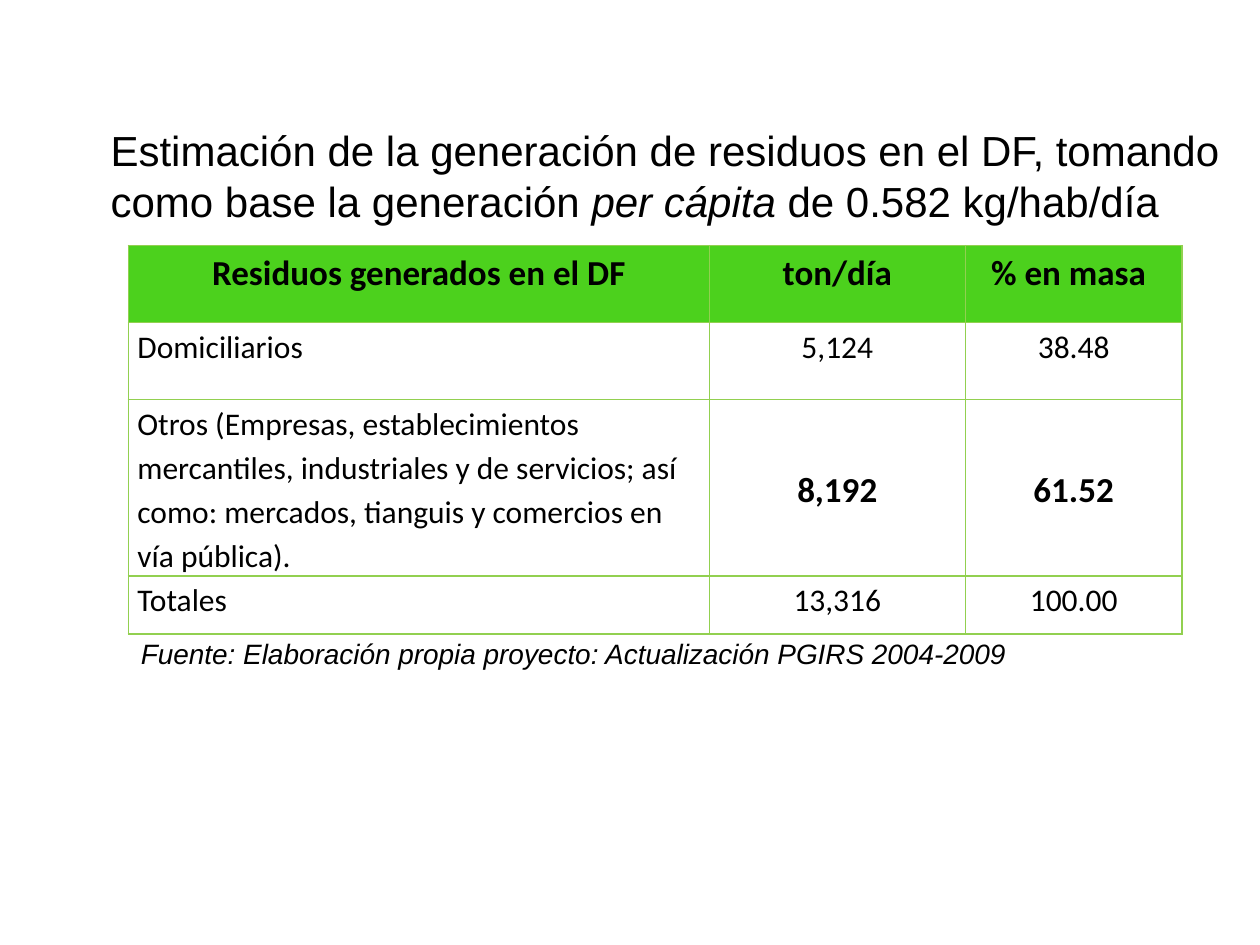
from dataclasses import dataclass

from lxml.etree import SubElement
from pptx import Presentation
from pptx.dml.color import RGBColor as Rgb
from pptx.enum.text import MSO_ANCHOR as Anchor, PP_ALIGN as Align
from pptx.oxml.ns import qn
from pptx.util import Cm, Pt


@dataclass(frozen=True)
class Theme:
    ink: str = "000000"
    header: str = "4CD11D"
    border: str = "92D050"
    prose: str = "Arial"
    grid: str = "Calibri"
    title: int = 24
    strong: int = 20
    body: int = 18
    source: int = 16


THEME = Theme()
COLUMNS = (11.71, 5.16, 4.37)
HEIGHTS = (1.55, 1.55, 3.5, 1.17)
OTHERS = (
    "Otros (Empresas, establecimientos mercantiles, industriales y de servicios; "
    "así como: mercados, tianguis y comercios en vía pública)."
)
WASTE = (
    ("Residuos generados en el DF", "ton/día", "% en masa"),
    ("Domiciliarios", "5,124", "38.48"),
    (OTHERS, "8,192", "61.52"),
    ("Totales", "13,316", "100.00"),
)


def style(font, face, size, bold=False, italic=False):
    font.name, font.size = face, Pt(size)
    font.bold, font.italic = bold, italic
    font.color.rgb = Rgb.from_string(THEME.ink)


def add_prose(slide, box, pieces, size):
    frame = slide.shapes.add_textbox(*map(Cm, box)).text_frame
    frame.word_wrap = True
    paragraph = frame.paragraphs[0]
    for words, italic in pieces:
        run = paragraph.add_run()
        run.text = words
        style(run.font, THEME.prose, size, italic=italic)


def outline(cell):
    properties = cell._tc.get_or_add_tcPr()
    for side in ("lnL", "lnR", "lnT", "lnB"):
        line = SubElement(properties, qn(f"a:{side}"), w=str(Pt(1)))
        fill = SubElement(line, qn("a:solidFill"))
        SubElement(fill, qn("a:srgbClr"), val=THEME.border)


def fill_cell(cell, words, row, column):
    is_header = row == 0
    is_strong = is_header or (row == 2 and column > 0)
    is_last_heading = is_header and column == 2
    cell.margin_left = Cm(0.52 if is_last_heading else 0.18)
    cell.margin_right = Cm(0.18)
    cell.margin_top = cell.margin_bottom = 0
    cell.vertical_anchor = Anchor.MIDDLE if is_strong and not is_header else Anchor.TOP
    outline(cell)
    if is_header:
        cell.fill.solid()
        cell.fill.fore_color.rgb = Rgb.from_string(THEME.header)
    else:
        cell.fill.background()
    cell.text_frame.text = words
    paragraph = cell.text_frame.paragraphs[0]
    centred = (is_header or column > 0) and not is_last_heading
    paragraph.alignment = Align.CENTER if centred else Align.LEFT
    paragraph.line_spacing = 1.15
    size = THEME.strong if is_strong else THEME.body
    style(paragraph.runs[0].font, THEME.grid, size, bold=is_strong)


def add_waste_table(slide, left, top):
    box = (left, top, sum(COLUMNS), sum(HEIGHTS))
    table = slide.shapes.add_table(len(WASTE), len(COLUMNS), *map(Cm, box)).table
    table.first_row = table.horz_banding = False
    for column, width in zip(table.columns, COLUMNS):
        column.width = Cm(width)
    for row, height in zip(table.rows, HEIGHTS):
        row.height = Cm(height)
    for row, entries in enumerate(WASTE):
        for column, words in enumerate(entries):
            fill_cell(table.cell(row, column), words, row, column)


def main():
    deck = Presentation()
    deck.slide_width, deck.slide_height = Cm(25.4), Cm(19.05)
    slide = deck.slides.add_slide(deck.slide_layouts[6])
    add_waste_table(slide, 2.59, 4.95)
    source = "Fuente: Elaboración propia proyecto: Actualización PGIRS 2004-2009"
    add_prose(slide, (2.59, 12.7, 18.85, 0.94), [(source, True)], THEME.source)
    heading = [
        ("Estimación de la generación de residuos en el DF, tomando "
         "como base la generación ", False),
        ("per cápita", True),
        (" de 0.582 kg/hab/día", False),
    ]
    add_prose(slide, (1.98, 2.39, 23.42, 2.31), heading, THEME.title)
    deck.save("out.pptx")


if __name__ == "__main__":
    main()
